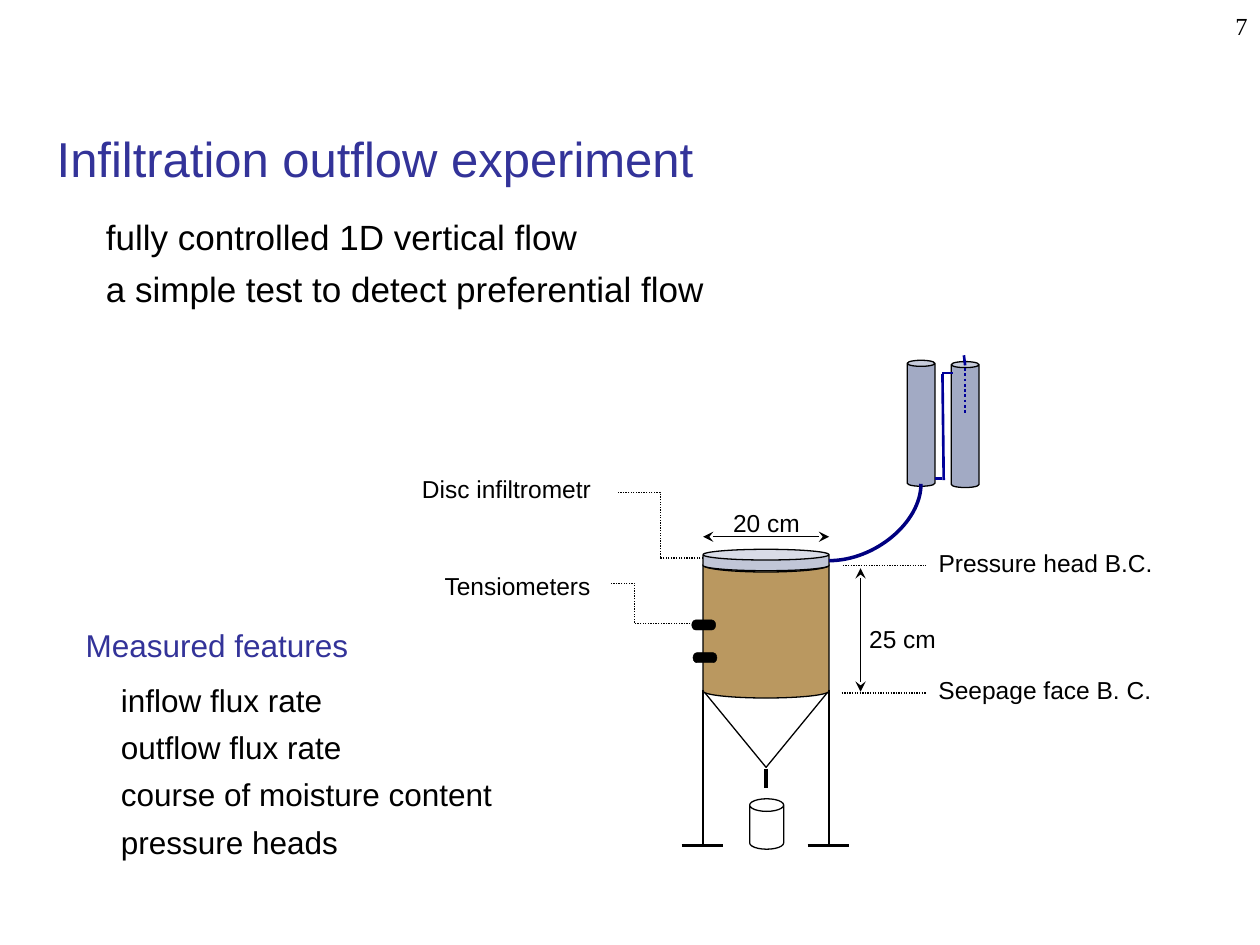
"""Build the slide on the infiltration outflow experiment."""
import pptx
import pptx.util
import pptx.dml.color
import pptx.enum.dml
import pptx.enum.shapes
import pptx.enum.text
import pptx.oxml
import pptx.oxml.ns
from pptx.util import Inches

SHAPE = pptx.enum.shapes.MSO_SHAPE
LINK = pptx.enum.shapes.MSO_CONNECTOR
ALIGN = pptx.enum.text.PP_ALIGN
ANCHOR = pptx.enum.text.MSO_ANCHOR
BLACK, WHITE, HEADING = "000000", "FFFFFF", "333399"
TUBE, STAND = "000099", "000000"


def colour(hex_text):
    return pptx.dml.color.RGBColor.from_string(hex_text)


def element(tag, **attributes):
    node = pptx.oxml.parse_xml(f"<{tag} {pptx.oxml.ns.nsdecls('a')}/>")
    for key, value in attributes.items():
        node.set(key, value)
    return node


class Sketch:
    def __init__(self, slide, font="Arial"):
        self.slide = slide
        self.font = font

    def style(self, paragraph, size, ink=BLACK, font=None, align=ALIGN.LEFT):
        paragraph.font.name = font or self.font
        paragraph.font.size = pptx.util.Pt(size)
        paragraph.font.color.rgb = colour(ink)
        paragraph.alignment = align

    def placeholder(self, index, box, lines):
        holder = self.slide.placeholders[index]
        holder.left, holder.top, holder.width, holder.height = map(Inches, box)
        frame = holder.text_frame
        frame.auto_size = pptx.enum.text.MSO_AUTO_SIZE.NONE
        frame.vertical_anchor = ANCHOR.TOP
        frame.text = "\n".join(line[0] for line in lines)
        for paragraph, (_, size, ink, spacing, indent) in zip(frame.paragraphs, lines):
            self.style(paragraph, size, ink)
            paragraph.line_spacing = spacing
            paragraph.space_before = pptx.util.Pt(0)
            properties = paragraph._p.get_or_add_pPr()
            properties.set("marL", str(Inches(indent)))
            properties.set("indent", "0")
            properties.append(element("a:buNone"))

    def label(self, text, left, top, width, height=0.33, **style):
        box = self.slide.shapes.add_textbox(*map(Inches, (left, top, width, height)))
        box.text_frame.word_wrap = False
        paragraph = box.text_frame.paragraphs[0]
        paragraph.text = text
        self.style(paragraph, 14, **style)
        return box

    def solid(self, kind, box, fill, adjust=None, weight=0.75, rotation=0):
        part = self.slide.shapes.add_shape(kind, *map(Inches, box))
        part.shadow.inherit = False
        part.rotation = rotation
        part.fill.solid()
        part.fill.fore_color.rgb = colour(fill)
        part.line.color.rgb = colour(BLACK)
        part.line.width = pptx.util.Pt(weight)
        if adjust is not None:
            part.adjustments[0] = adjust

    def link(self, ends, ink=BLACK, weight=0.75, kind=LINK.STRAIGHT,
             dotted=False, arrows=False, bend=None):
        link = self.slide.shapes.add_connector(kind, *map(Inches, ends))
        link.line.color.rgb = colour(ink)
        link.line.width = pptx.util.Pt(weight)
        if dotted:
            link.line.dash_style = pptx.enum.dml.MSO_LINE.ROUND_DOT
        if arrows:
            outline = link.line._get_or_add_ln()
            for end in ("a:headEnd", "a:tailEnd"):
                outline.append(element(end, type="stealth"))
        properties = link._element.spPr
        geometry = properties.find(pptx.oxml.ns.qn("a:prstGeom"))
        if kind == LINK.CURVE:
            geometry.set("prst", "curvedConnector2")
        if bend is not None:
            geometry.get_or_add_avLst().append(
                element("a:gd", name="adj1", fmla=f"val {round(bend * 100000)}"))
        properties.append(element("a:effectLst"))


def write_text(sketch):
    sketch.placeholder(0, (0.35, 0.97, 5.65, 0.6),
                       [("Infiltration outflow experiment", 28, HEADING, 1, 0)])
    sketch.placeholder(1, (0.74, 1.66, 5.26, 0.9), [
        ("fully controlled 1D vertical flow", 20, BLACK, 1, 0),
        ("a simple test to detect preferential flow", 20, BLACK, 1.25, 0)])
    features = ("inflow flux rate", "outflow flux rate",
                "course of moisture content", "pressure heads")
    sketch.placeholder(2, (0.58, 4.92, 3.45, 1.92), [
        ("Measured features", 18, HEADING, 1, 0),
        *((feature, 18, BLACK, 1.25 if row else 1.45, 0.28)
          for row, feature in enumerate(features))])
    number = sketch.label("7", 9.4, 0, 0.6, 0.41,
                          font="Times New Roman", align=ALIGN.RIGHT)
    number.text_frame.word_wrap = True
    number.text_frame.vertical_anchor = ANCHOR.MIDDLE


def draw_column(sketch):
    left, right = 5.58, 6.58
    sketch.solid(SHAPE.ISOSCELES_TRIANGLE, (left, 5.48, 1, 0.61), WHITE, rotation=180)
    sketch.solid(SHAPE.CAN, (left, 4.43, 1, 1.11), "BA9860", 0.11)
    for tensiometer_left, tensiometer_top in ((5.49, 4.92), (5.5, 5.18)):
        sketch.solid(SHAPE.FLOWCHART_TERMINATOR,
                     (tensiometer_left, tensiometer_top, 0.19, 0.08), BLACK, weight=0.25)
    for leg in (left, right):
        sketch.link((leg, 5.48, leg, 6.71), STAND, 1.5)
        sketch.link((leg - 0.17, 6.71, leg + 0.16, 6.71), STAND, 2)
    sketch.solid(SHAPE.CAN, (5.95, 6.34, 0.27, 0.4), WHITE, 0.37)
    sketch.link((6.08, 6.1, 6.08, 6.25), STAND, 2)
    sketch.solid(SHAPE.CAN, (left, 4.36, 1, 0.17), "C1C6D7", 0.5)


def draw_supply(sketch):
    for left, top in ((7.2, 2.86), (7.55, 2.87)):
        sketch.solid(SHAPE.CAN, (left, top, 0.22, 1), "A2AAC4", 0.22)
    sketch.link((6.58, 4.45, 7.31, 3.84), "000080", 2, LINK.CURVE)
    for ends in ((7.65, 2.82, 7.66, 2.9), (7.48, 2.97, 7.49, 3.81),
                 (7.56, 2.96, 7.48, 2.96), (7.48, 3.8, 7.42, 3.8)):
        sketch.link(ends, TUBE, 1.5)
    sketch.link((7.66, 2.88, 7.66, 3.28), TUBE, 1.5, dotted=True)


def annotate(sketch):
    for text, left, top, width in (
            ("25 cm", 6.8, 4.9, 0.73), ("20 cm", 5.72, 3.98, 0.73),
            ("Seepage face B. C.", 7.35, 5.31, 2.23),
            ("Pressure head B.C.", 7.35, 4.3, 1.92),
            ("Tensiometers", 3.43, 4.48, 1.42),
            ("Disc infiltrometr", 3.25, 3.71, 1.55)):
        sketch.label(text, left, top, width)
    for dimension in ((6.83, 4.51, 6.83, 5.49), (5.58, 4.26, 6.58, 4.26)):
        sketch.link(dimension, arrows=True)
    for boundary in ((6.69, 4.49, 7.35, 4.49), (6.68, 5.5, 7.35, 5.5)):
        sketch.link(boundary, dotted=True)
    for leader, bend in (((5.52, 4.95, 4.84, 4.63), 0.71),
                         ((5.58, 4.43, 4.9, 3.91), 0.5)):
        sketch.link(leader, kind=LINK.ELBOW, dotted=True, bend=bend)


def main():
    deck = pptx.Presentation()
    deck.slide_width, deck.slide_height = Inches(10), Inches(7.5)
    sketch = Sketch(deck.slides.add_slide(deck.slide_layouts[3]))
    write_text(sketch)
    draw_column(sketch)
    draw_supply(sketch)
    annotate(sketch)
    deck.save("out.pptx")


if __name__ == "__main__":
    main()
